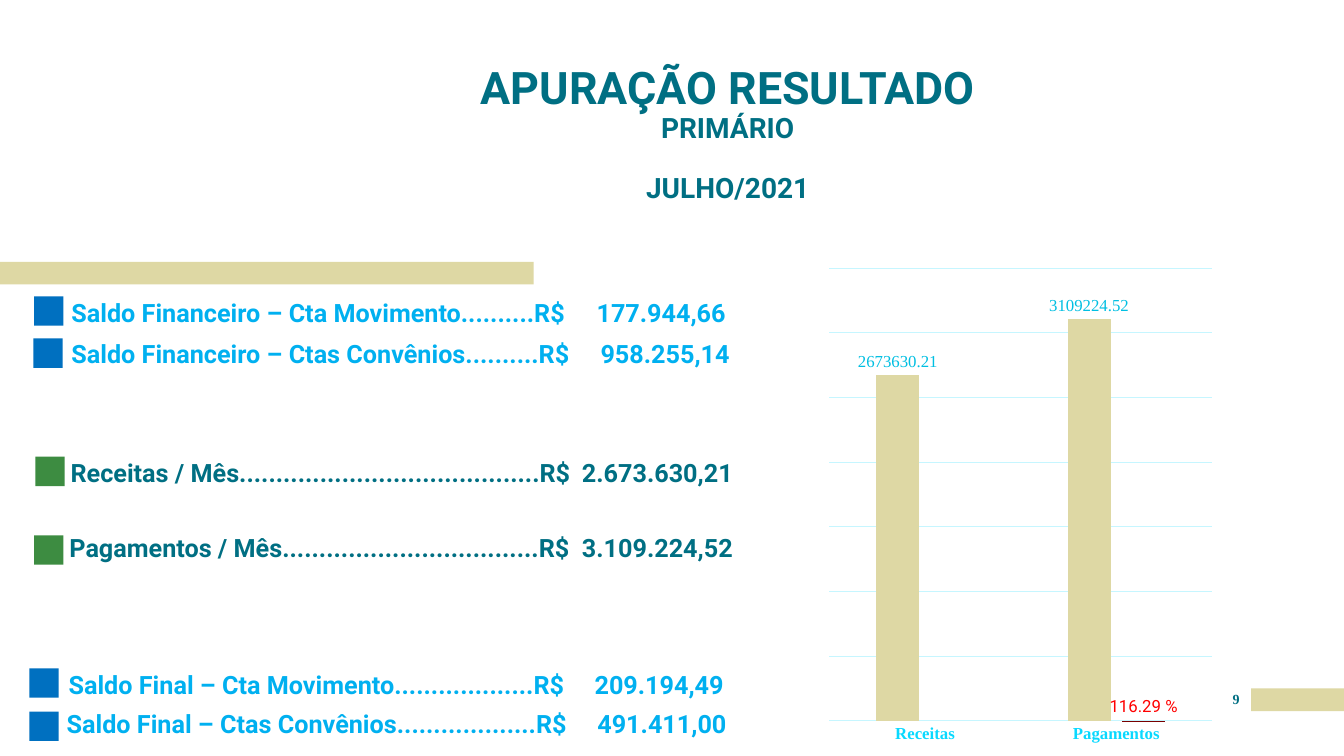
"""Build the slide on the primary result for July 2021."""
from dataclasses import dataclass

from lxml.etree import SubElement
from pptx import Presentation
from pptx.chart.data import CategoryChartData
from pptx.dml.color import RGBColor
from pptx.enum.chart import XL_CHART_TYPE as ChartType
from pptx.enum.chart import XL_LABEL_POSITION as LabelPosition
from pptx.enum.chart import XL_TICK_MARK as TickMark
from pptx.enum.shapes import MSO_SHAPE as Preset
from pptx.enum.text import MSO_ANCHOR as Anchor
from pptx.enum.text import PP_ALIGN as Align
from pptx.oxml.ns import qn
from pptx.util import Cm, Pt

SAND = RGBColor(0xDE, 0xD8, 0xA4)
TEAL = RGBColor(0x00, 0x6F, 0x83)
SKY = RGBColor(0x00, 0xB0, 0xF0)
BLUE = RGBColor(0x00, 0x70, 0xC0)
GREEN = RGBColor(0x3D, 0x8C, 0x41)
MAROON = RGBColor(0x79, 0x00, 0x00)
RED = RGBColor(0xFF, 0x00, 0x00)
CYAN = RGBColor(0x00, 0xBF, 0xE2)
BRIGHT_CYAN = RGBColor(0x09, 0xD9, 0xFF)
PALE_CYAN = RGBColor(0xC6, 0xF6, 0xFF)
SANS = "Roboto"
SERIF = "Times New Roman"
MARKER_SIZE = 0.74


@dataclass(frozen=True)
class Box:
    left: float
    top: float
    width: float
    height: float

    def lengths(self) -> tuple:
        return Cm(self.left), Cm(self.top), Cm(self.width), Cm(self.height)


@dataclass(frozen=True)
class Balance:
    label: str
    amount: str
    marker_left: float
    marker_top: float
    box: Box
    amount_right: float
    marker_color: RGBColor = BLUE
    text_color: RGBColor = SKY


BALANCES = (
    Balance("Saldo Financeiro – Cta Movimento..........R$", "177.944,66",
            0.86, 7.47, Box(1.8, 7.29, 20.47, 0.97), 18.29),
    Balance("Saldo Financeiro – Ctas Convênios..........R$", "958.255,14",
            0.84, 8.53, Box(1.8, 8.33, 19.79, 0.97), 18.39),
    Balance("Receitas / Mês.........................................R$", "2.673.630,21",
            0.89, 11.51, Box(1.78, 11.33, 18.59, 0.97), 18.47, GREEN, TEAL),
    Balance("Pagamentos / Mês...................................R$", "3.109.224,52",
            0.86, 13.49, Box(1.75, 13.21, 18.8, 0.97), 18.47, GREEN, TEAL),
    Balance("Saldo Final – Cta Movimento...................R$", "209.194,49",
            0.74, 16.84, Box(1.73, 16.51, 18.87, 1.14), 18.24),
    Balance("Saldo Final – Ctas Convênios...................R$", "491.411,00",
            0.74, 17.93, Box(1.68, 17.65, 19.63, 0.97), 18.31),
)


def add_rectangle(slide, box: Box, color: RGBColor) -> None:
    shape = slide.shapes.add_shape(Preset.RECTANGLE, *box.lengths())
    shape.shadow.inherit = False
    shape.fill.solid()
    shape.fill.fore_color.rgb = color
    shape.line.fill.background()


def add_frame(slide, box: Box, anchor=Anchor.BOTTOM, bottom: float = 0):
    frame = slide.shapes.add_textbox(*box.lengths()).text_frame
    frame.word_wrap = True
    frame.vertical_anchor = anchor
    frame.margin_left = frame.margin_right = frame.margin_top = 0
    frame.margin_bottom = Cm(bottom)
    return frame


def set_font(font, size: float, color: RGBColor, name: str, bold: bool) -> None:
    font.size = Pt(size)
    font.color.rgb = color
    font.name = name
    font.bold = bold


def write(frame, text: str, *, size: float, color: RGBColor = TEAL, name: str = SANS,
          align=Align.LEFT, spacing: float = 0.9, before: float = 0):
    paragraph = frame.add_paragraph() if frame.text else frame.paragraphs[0]
    paragraph.alignment = align
    paragraph.line_spacing = spacing
    paragraph.space_before = Pt(before)
    run = paragraph.add_run()
    run.text = text
    set_font(run.font, size, color, name, True)
    return paragraph


def add_right_tab(paragraph, position: float) -> None:
    properties = paragraph._p.get_or_add_pPr()
    tabs = SubElement(properties, qn("a:tabLst"))
    SubElement(tabs, qn("a:tab"), pos=str(Cm(position)), algn="r")


def add_balance(slide, balance: Balance) -> None:
    marker = Box(balance.marker_left, balance.marker_top, MARKER_SIZE, MARKER_SIZE)
    add_rectangle(slide, marker, balance.marker_color)
    paragraph = write(add_frame(slide, balance.box), f"{balance.label}\t{balance.amount}",
                      size=18, color=balance.text_color, before=6)
    add_right_tab(paragraph, balance.amount_right - balance.box.left)


def set_plot_layout(chart, x: float, y: float, w: float, h: float) -> None:
    plot_area = chart._chartSpace.chart.plotArea
    for old_layout in plot_area.findall(qn("c:layout")):
        plot_area.remove(old_layout)
    layout = SubElement(plot_area, qn("c:layout"))
    plot_area.insert(0, layout)
    manual = SubElement(layout, qn("c:manualLayout"))
    settings = {"layoutTarget": "inner", "xMode": "edge", "yMode": "edge",
                "x": x, "y": y, "w": w, "h": h}
    for tag, value in settings.items():
        SubElement(manual, qn(f"c:{tag}"), val=str(value))


def format_series(series, color: RGBColor, label_color: RGBColor,
                  name: str, number_format: str) -> None:
    series.format.fill.solid()
    series.format.fill.fore_color.rgb = color
    labels = series.data_labels
    labels.show_value = True
    labels.position = LabelPosition.OUTSIDE_END
    labels.number_format = number_format
    labels.number_format_is_linked = False
    set_font(labels.font, 12, label_color, name, False)


def style_line(line) -> None:
    line.color.rgb = PALE_CYAN
    line.width = Pt(0.75)


def add_result_chart(slide) -> None:
    data = CategoryChartData()
    data.categories = ["Receitas", "Pagamentos"]
    data.add_series("Series 1", (2673630.21, 3109224.52))
    data.add_series("Series 2", (None, 116.29))
    box = Box(18.9, 6.38, 12.52, 12.67)
    chart = slide.shapes.add_chart(ChartType.COLUMN_CLUSTERED, *box.lengths(), data).chart
    chart.has_legend = False
    chart.has_title = False
    set_font(chart.font, 10, TEAL, SERIF, False)
    set_plot_layout(chart, 0.16, 0.03, 0.77, 0.9)

    plot = chart.plots[0]
    plot.vary_by_categories = False
    plot.gap_width = 219
    plot.overlap = -27
    receipts, share = plot.series
    format_series(receipts, SAND, CYAN, SERIF, "0.00")
    format_series(share, MAROON, RED, SANS, '0.00" %"')

    category_axis = chart.category_axis
    category_axis.major_tick_mark = TickMark.NONE
    style_line(category_axis.format.line)
    set_font(category_axis.tick_labels.font, 12, BRIGHT_CYAN, SERIF, True)
    value_axis = chart.value_axis
    value_axis.visible = False
    value_axis.minimum_scale = 0
    value_axis.maximum_scale = 3500000
    value_axis.major_unit = 500000
    style_line(value_axis.major_gridlines.format.line)


def main() -> None:
    presentation = Presentation()
    presentation.slide_width = Cm(33.87)
    presentation.slide_height = Cm(19.05)
    slide = presentation.slides.add_slide(presentation.slide_layouts[6])
    add_rectangle(slide, Box(31.53, 17.35, 2.34, 0.57), SAND)
    add_rectangle(slide, Box(0, 6.6, 13.45, 0.57), SAND)

    title = add_frame(slide, Box(10.29, 0.28, 16.1, 5.71), bottom=0.84)
    write(title, "APURAÇÃO RESULTADO", size=32, align=Align.CENTER)
    write(title, "PRIMÁRIO", size=20, align=Align.CENTER)
    write(title, "JULHO/2021", size=20, align=Align.CENTER, before=21)

    for balance in BALANCES:
        add_balance(slide, balance)
    add_result_chart(slide)
    page_number = add_frame(slide, Box(30.78, 17.4, 0.74, 0.64), Anchor.TOP)
    write(page_number, "9", size=10, name=SERIF, align=Align.CENTER, spacing=1)
    presentation.save("out.pptx")


if __name__ == "__main__":
    main()
